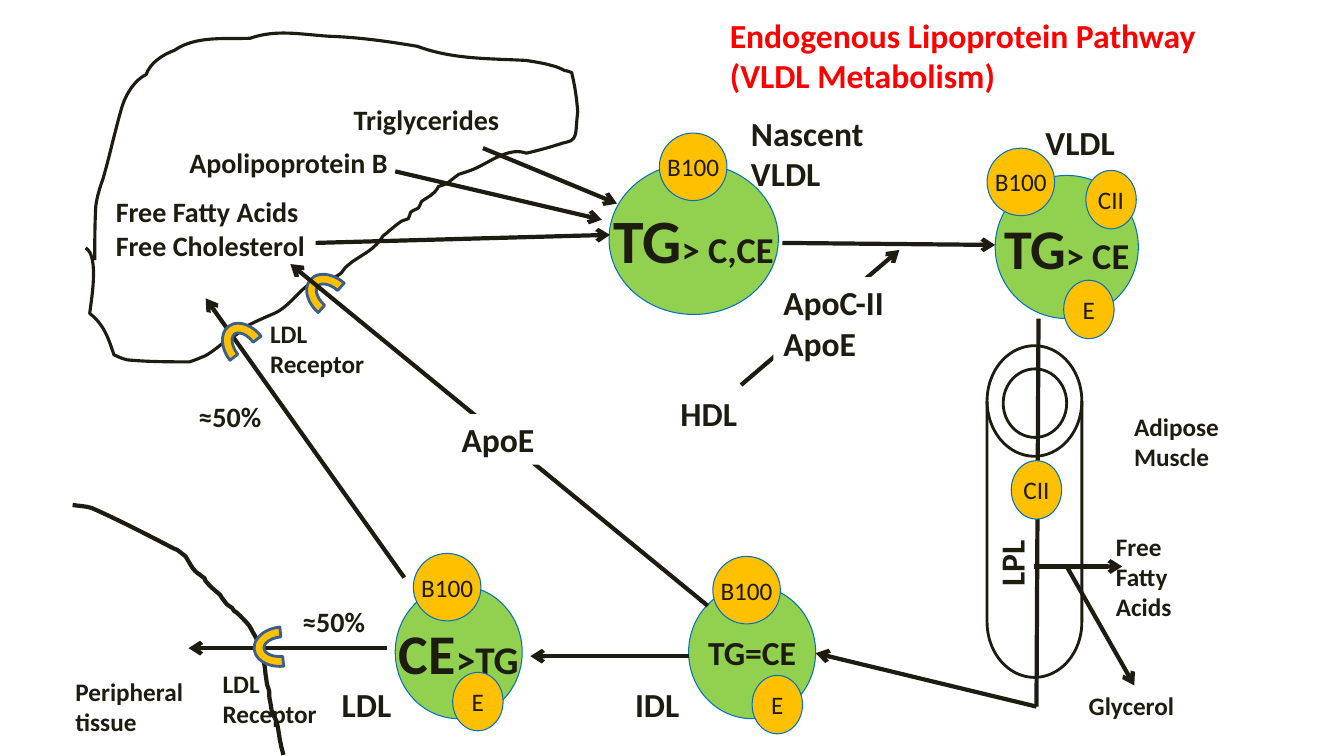
from lxml import etree
from pptx import Presentation, util as u
from pptx.dml.color import RGBColor
from pptx.enum import shapes as s, text as t
from pptx.oxml.ns import qn

HUE = {"ink": "1E1C11", "red": "FF0000", "green": "92D050", "gold": "FFC000",
       "blue": "0071C2", "navy": "3A5F8C", "white": "FFFFFF"}

# start point, then x, y of two handles and an end for each Bezier curve
LIVER = [
    0.94, 2.58,
    0.94, 2.4, 0.94, 2.23, 0.95, 2.05, 0.96, 1.96, 0.99, 1.86, 1.02, 1.78,
    1.09, 1.54, 1.14, 1.3, 1.21, 1.06, 1.25, 0.93, 1.34, 0.79, 1.45, 0.74,
    1.49, 0.62, 1.62, 0.54, 1.73, 0.5, 1.94, 0.35, 2.26, 0.39, 2.48, 0.38,
    2.74, 0.29, 2.97, 0.34, 3.26, 0.36, 3.56, 0.37, 3.84, 0.41, 4.14, 0.46,
    4.49, 0.59, 4.85, 0.58, 5.22, 0.6, 5.28, 0.61, 5.41, 0.63, 5.47, 0.65,
    5.52, 0.66, 5.56, 0.68, 5.6, 0.7, 5.62, 0.7, 5.67, 0.72, 5.67, 0.72,
    5.7, 0.84, 5.72, 0.97, 5.73, 1.11, 5.72, 1.18, 5.72, 1.25, 5.71, 1.32,
    5.69, 1.41, 5.65, 1.4, 5.58, 1.42, 5.46, 1.46, 5.35, 1.49, 5.22, 1.52,
    5.06, 1.46, 4.88, 1.59, 4.74, 1.66, 4.68, 1.69, 4.61, 1.71, 4.55, 1.73,
    4.4, 1.84, 4.47, 1.81, 4.35, 1.85, 4.3, 1.94, 4.26, 1.94, 4.18, 2,
    4.17, 2.02, 4.16, 2.06, 4.14, 2.07, 4.12, 2.09, 4.09, 2.08, 4.08, 2.1,
    4.06, 2.11, 4.07, 2.15, 4.05, 2.17, 4.04, 2.18, 4.01, 2.18, 3.99, 2.19,
    3.94, 2.22, 3.9, 2.26, 3.86, 2.29, 3.84, 2.31, 3.8, 2.34, 3.8, 2.34,
    3.71, 2.48, 3.62, 2.51, 3.49, 2.6, 3.47, 2.62, 3.45, 2.63, 3.43, 2.65,
    3.41, 2.67, 3.39, 2.71, 3.37, 2.72, 3.27, 2.79, 3.15, 2.82, 3.04, 2.84,
    2.94, 2.92, 2.84, 3.06, 2.72, 3.11, 2.67, 3.13, 2.49, 3.21, 2.46, 3.23,
    2.31, 3.34, 2.38, 3.31, 2.27, 3.35, 2.22, 3.4, 2.06, 3.53, 2.01, 3.54,
    1.97, 3.56, 1.88, 3.59, 1.88, 3.59, 1.67, 3.59, 1.47, 3.59, 1.26, 3.57,
    1.21, 3.56, 1.13, 3.52, 1.13, 3.52, 1.07, 3.34, 1.03, 3.22, 0.89, 3.11,
    0.9, 3.01, 0.99, 2.54, 0.85, 2.46]
TISSUE = [
    0.72, 5.01,
    0.78, 5.02, 0.85, 5.02, 0.91, 5.04, 1.18, 5.16, 1.45, 5.3, 1.72, 5.44,
    1.75, 5.45, 1.77, 5.46, 1.79, 5.48, 1.81, 5.49, 1.82, 5.51, 1.84, 5.52,
    1.88, 5.58, 1.91, 5.66, 1.98, 5.7, 2.11, 5.8, 1.95, 5.68, 2.1, 5.83,
    2.12, 5.85, 2.15, 5.87, 2.17, 5.89, 2.19, 5.9, 2.19, 5.92, 2.2, 5.93,
    2.26, 6.01, 2.24, 5.99, 2.3, 6.03, 2.38, 6.14, 2.25, 5.97, 2.44, 6.17,
    2.49, 6.22, 2.49, 6.25, 2.53, 6.31, 2.61, 6.47, 2.53, 6.3, 2.6, 6.44,
    2.6, 6.46, 2.6, 6.49, 2.61, 6.52, 2.61, 6.54, 2.62, 6.56, 2.62, 6.58,
    2.63, 6.63, 2.63, 6.68, 2.64, 6.73, 2.65, 6.82, 2.65, 6.78, 2.67, 6.86,
    2.67, 6.89, 2.67, 6.93, 2.68, 6.96, 2.72, 7.2, 2.68, 7.02, 2.74, 7.15,
    2.75, 7.18, 2.76, 7.24, 2.76, 7.24, 2.8, 7.49, 2.76, 7.25, 2.79, 7.41,
    2.8, 7.44, 2.81, 7.49, 2.81, 7.49]
# box, then (text, size) runs
PARTICLES = [
    ((6.04, 1.62, 1.68, 1.5), [("TG", 44), ("> C,CE", 26)]),
    ((9.87, 1.74, 1.42, 1.42), [("TG", 40), ("> CE", 26)]),
    ((6.83, 5.81, 1.26, 1.32), [("TG=CE", 24)]),
    ((3.92, 5.81, 1.26, 1.32), [("CE", 40), (">TG", 28)])]
BADGES = {
    "B100": [(6.54, 1.32), (9.79, 1.47), (7.07, 5.52), (4.1, 5.49)],
    "CII": [(10.77, 1.69), (10.03, 4.57)],
    "E": [(10.55, 2.78), (7.46, 6.7), (4.49, 6.67)]}
BADGE_SIZE = {"B100": (0.67, 0.67), "CII": (0.5, 0.58), "E": (0.5, 0.58)}
VESSEL = [(s.MSO_SHAPE.FLOWCHART_MAGNETIC_DISK, (9.79, 3.43, 0.94, 3.29)),
          (s.MSO_SHAPE.OVAL, (9.95, 3.66, 0.63, 0.68))]
# left, top, rotation
RECEPTORS = [(2.24, 3.18, 322.2), (2.6, 6.14, 264.4), (3.09, 2.68, 311.4)]
LUMEN = (10.3, 3.16, 10.28, 7.01)
ARROWS = [
    (4.79, 1.47, 6.12, 2.02), (3.92, 1.7, 5.97, 2.18), (3.13, 2.41, 6.05, 2.33),
    (7.76, 2.41, 9.87, 2.43), (10.26, 5.62, 11.13, 5.62),
    (10.58, 5.62, 11.25, 6.8), (10.28, 7.01, 8.09, 6.48),
    (6.83, 6.51, 5.26, 6.51), (4.01, 5.73, 2.04, 2.96),
    (3.84, 6.43, 1.87, 6.43), (7.35, 3.82, 8.92, 2.48)]
UPTAKE = (7.02, 6.01, 2.88, 2.62)
# size: (box, lines)
LABELS = {
    20: [((1.05, 1.88, 2.36, 0.77), ["Free Fatty Acids", "Free Cholesterol"]),
         ((1.78, 1.39, 2.54, 0.44), ["Apolipoprotein B"]),
         ((3.41, 0.97, 1.97, 0.44), ["Triglycerides"]),
         ((2.9, 5.95, 0.87, 0.44), ["≈50%"]),
         ((1.87, 3.91, 0.87, 0.44), ["≈50%"])],
    24: [((7.35, 1.07, 1.42, 0.91), ["Nascent VLDL"]),
         ((10.27, 1.16, 1.42, 0.5), ["VLDL"]),
         ((6.2, 6.74, 1.42, 0.5), ["IDL"]),
         ((3.29, 6.74, 1.42, 0.5), ["LDL"]),
         ((6.65, 3.85, 1.18, 0.5), ["HDL"])],
    18: [((10.7, 6.8, 1.1, 0.4), ["Glycerol"]),
         ((10.97, 5.22, 0.83, 1.01), ["Free Fatty Acids"]),
         ((0.65, 6.66, 1.61, 0.71), ["Peripheral tissue"]),
         ((11.15, 4.03, 1.06, 0.71), ["Adipose Muscle"]),
         ((2.58, 3.11, 1.26, 0.71), ["LDL Receptor"]),
         ((2.11, 6.58, 1.26, 0.71), ["LDL Receptor"])]}
TITLE = ["Endogenous Lipoprotein Pathway", "(VLDL Metabolism)"]
MASKS = [((7.67, 2.75, 2.18, 0.91), ["ApoC-II", "ApoE"]),
         ((4.48, 4.11, 1.57, 0.5), ["ApoE"])]

deck = Presentation()
deck.slide_width, deck.slide_height = u.Inches(13.33), u.Inches(7.5)
parts = deck.slides.add_slide(deck.slide_layouts[6]).shapes


def rgb(name):
    return RGBColor.from_string(HUE[name])


def inch(nums):
    return [u.Inches(n) for n in nums]


def paint(shape, fill, line, width):
    shape.shadow.inherit = False
    if fill:
        shape.fill.solid()
        shape.fill.fore_color.rgb = rgb(fill)
    else:
        shape.fill.background()
    shape.line.color.rgb = rgb(line)
    shape.line.width = u.Pt(width)


def style(font, size, bold=True, hue="ink"):
    font.name, font.size, font.bold = "Calibri", u.Pt(size), bold
    font.color.rgb = rgb(hue)


def curve(nums, width):
    """Draw an open outline, each three points after the first one Bezier."""
    dots = list(zip(inch(nums[::2]), inch(nums[1::2])))
    pen = parts.build_freeform(*dots[0])
    pen.add_line_segments(dots[1:], close=False)
    shape = pen.convert_to_shape()
    paint(shape, None, "ink", width)
    trace = next(shape._element.iter(qn("a:path")))
    legs = trace.findall(qn("a:lnTo"))
    for k in range(0, len(legs), 3):
        bend = etree.SubElement(trace, qn("a:cubicBezTo"))
        for leg in legs[k:k + 3]:
            bend.append(leg[0])
            trace.remove(leg)


def link(ends, head=True):
    wire = parts.add_connector(s.MSO_CONNECTOR.STRAIGHT, *inch(ends))
    wire.line.color.rgb = rgb("ink")
    wire.line.width = u.Pt(3)
    if head:
        etree.SubElement(wire.line._get_or_add_ln(), qn("a:tailEnd"), type="arrow")
    etree.SubElement(wire._element.spPr, qn("a:effectLst"))


def label(box, lines, size, hue="ink"):
    note = parts.add_textbox(*inch(box))
    frame = note.text_frame
    frame.word_wrap = True
    frame.auto_size = t.MSO_AUTO_SIZE.SHAPE_TO_FIT_TEXT
    frame.text = "\n".join(lines)
    for para in frame.paragraphs:
        style(para.font, size, hue=hue)
    return note


def disc(box, fill, runs, bold):
    ball = parts.add_shape(s.MSO_SHAPE.OVAL, *inch(box))
    paint(ball, fill, "blue", 0.75)
    frame = ball.text_frame
    frame.word_wrap = False
    frame.vertical_anchor = t.MSO_ANCHOR.MIDDLE
    para = frame.paragraphs[0]
    para.alignment = t.PP_ALIGN.CENTER
    for words, size in runs:
        run = para.add_run()
        run.text = words
        style(run.font, size, bold)


curve(LIVER, 2.25)
curve(TISSUE, 3)
for box, runs in PARTICLES:
    disc(box, "green", runs, True)
tube = parts.add_group_shape().shapes
for kind, box in VESSEL:
    paint(tube.add_shape(kind, *inch(box)), None, "ink", 2)
link(LUMEN, head=False)
for ends in ARROWS:
    link(ends)
for left, top, turn in RECEPTORS:
    arc = parts.add_shape(s.MSO_SHAPE.BLOCK_ARC, *inch((left, top, 0.39, 0.55)))
    arc.rotation = turn
    paint(arc, "gold", "navy", 2)
link(UPTAKE)
for box, lines in MASKS:
    mask = label(box, lines, 24)
    mask.fill.solid()
    mask.fill.fore_color.rgb = rgb("white")
label((7.14, 0.1, 5.83, 1.31), TITLE, 24, "red")
for size, group in LABELS.items():
    for box, lines in group:
        label(box, lines, size)
label((9.56, 5.2, 0.94, 0.5), ["LPL"], 24).rotation = 270
for words, spots in BADGES.items():
    for spot in spots:
        disc(spot + BADGE_SIZE[words], "gold", [(words, 18)], False)

deck.save("out.pptx")
